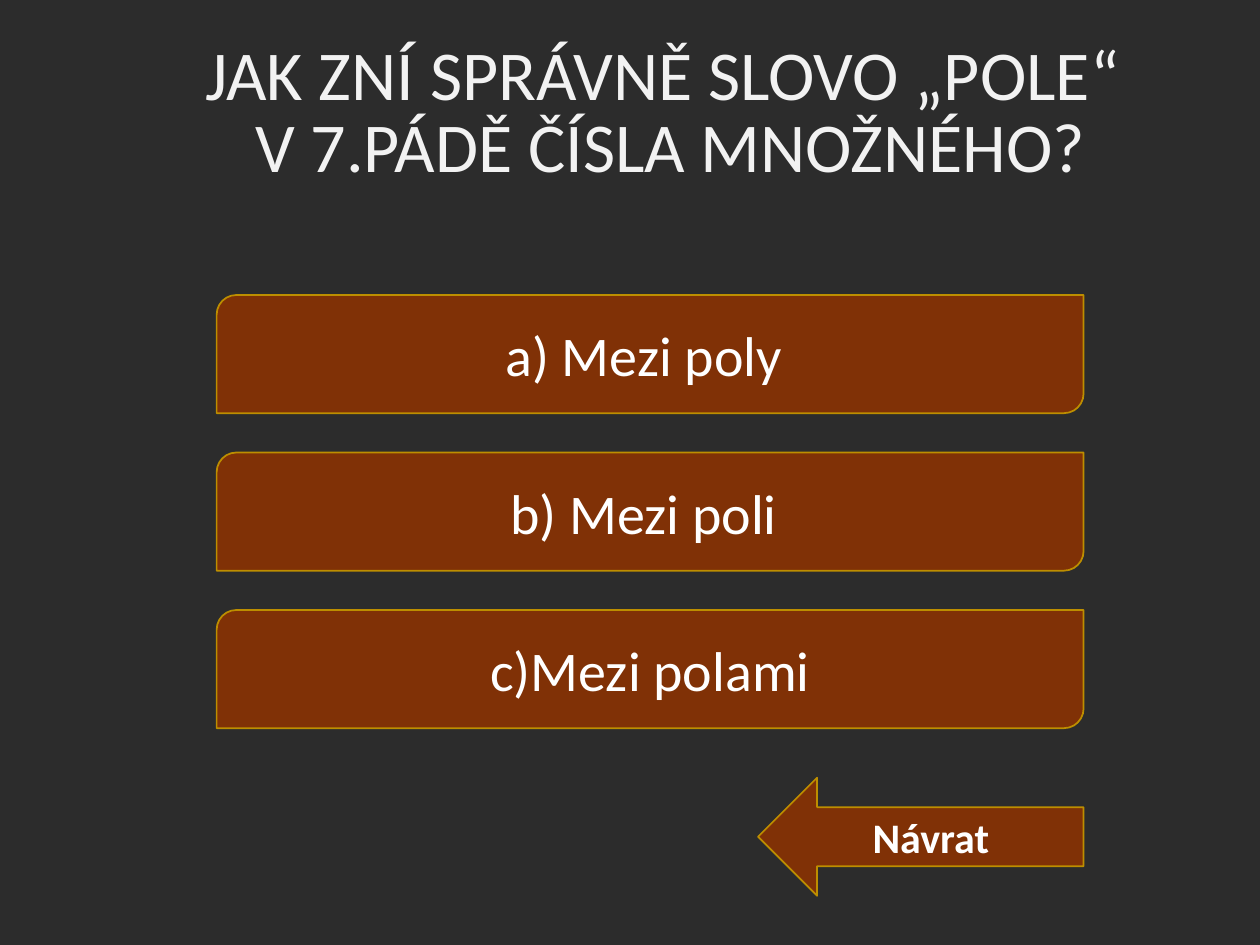
import pptx
import pptx.util
import pptx.dml.color
import pptx.enum.shapes
import pptx.enum.text

Pt = pptx.util.Pt
Kind = pptx.enum.shapes.MSO_SHAPE


def tint(code):
    return pptx.dml.color.RGBColor.from_string(code)


def write(para, text, size, code, bold=False):
    run = para.add_run()
    run.text = text
    run.font.name = "Calibri"
    run.font.size = Pt(size)
    run.font.bold = bold
    run.font.color.rgb = tint(code)


deck = pptx.Presentation()
deck.slide_width, deck.slide_height = Pt(720), Pt(540)
slide = deck.slides.add_slide(deck.slide_layouts[5])

# Background
slide.background.fill.solid()
slide.background.fill.fore_color.rgb = tint("2C2C2C")

# Question
title = slide.shapes.title
title.left, title.top = Pt(87.84), Pt(20.88)
title.width, title.height = Pt(590.4), Pt(90)
frame = title.text_frame
frame.word_wrap = True
frame.auto_size = pptx.enum.text.MSO_AUTO_SIZE.NONE
frame.vertical_anchor = pptx.enum.text.MSO_ANCHOR.MIDDLE
para = frame.paragraphs[0]
para.alignment = pptx.enum.text.PP_ALIGN.CENTER
para.line_spacing = 0.85
write(para, "JAK ZNÍ SPRÁVNĚ SLOVO „POLE“ ", 40, "F2F2F2")
para.add_line_break()
write(para, "V 7.PÁDĚ ČÍSLA MNOŽNÉHO?", 40, "F2F2F2")

# Answers at an even step, then the return arrow on the same right edge
right, high = 619.2, 67.5
answers = ["a) Mezi poly ", "b) Mezi poli ", "c)Mezi polami"]
items = [(Kind.ROUND_2_DIAG_RECTANGLE, 168.6 + 90 * row, 495.4, text, 32, False)
         for row, text in enumerate(answers)]
items.append((Kind.LEFT_ARROW, 444.4, 186, "Návrat ", 24, True))

for kind, top, wide, text, size, bold in items:
    shape = slide.shapes.add_shape(kind, Pt(right - wide), Pt(top), Pt(wide), Pt(high))
    shape.shadow.inherit = False
    shape.fill.solid()
    shape.fill.fore_color.rgb = tint("803106")
    shape.line.color.rgb = tint("BD8E00")
    shape.line.width = Pt(1)
    frame = shape.text_frame
    frame.word_wrap = True
    frame.vertical_anchor = pptx.enum.text.MSO_ANCHOR.MIDDLE
    para = frame.paragraphs[0]
    para.alignment = pptx.enum.text.PP_ALIGN.CENTER
    write(para, text, size, "FFFFFF", bold)

deck.save("out.pptx")
